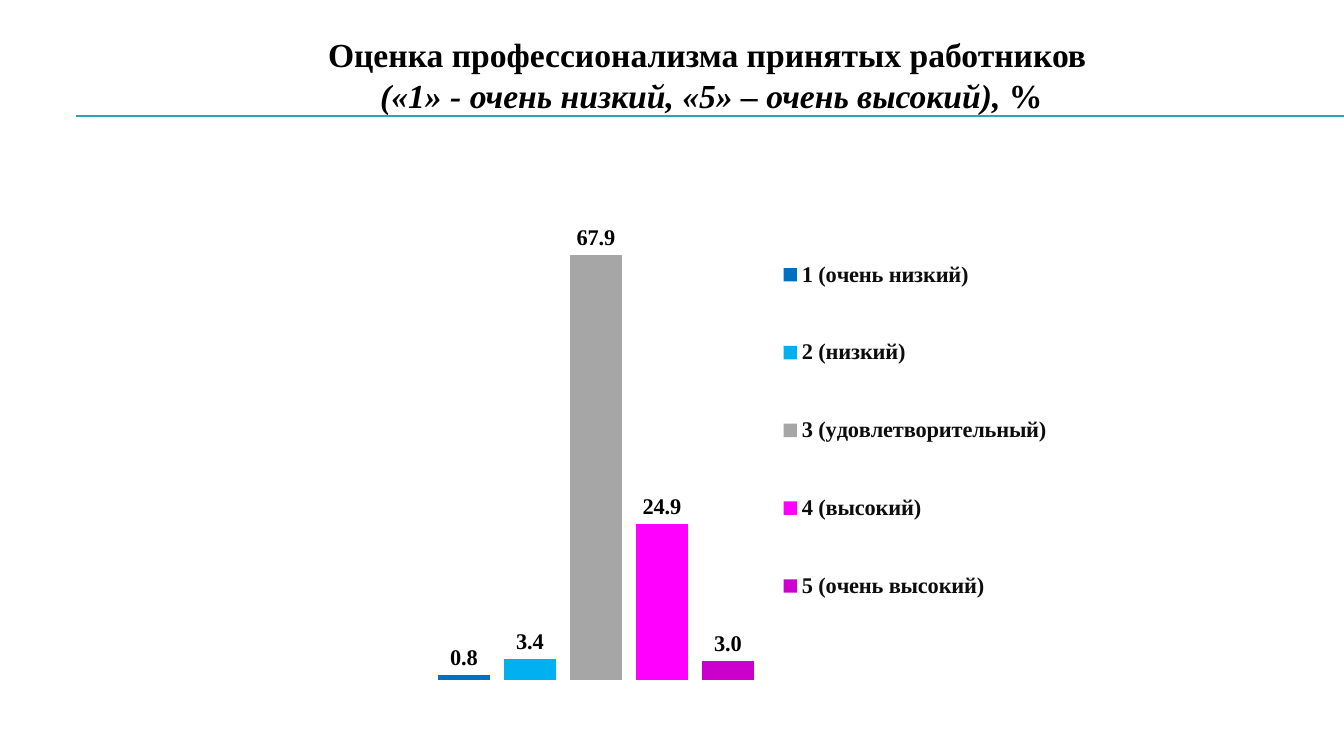
from typing import NamedTuple

from lxml import etree
from pptx import Presentation
from pptx.chart.data import CategoryChartData
from pptx.dml.color import RGBColor
from pptx.enum.chart import XL_CHART_TYPE, XL_LABEL_POSITION, XL_LEGEND_POSITION
from pptx.enum.shapes import MSO_CONNECTOR
from pptx.enum.text import MSO_ANCHOR, PP_ALIGN
from pptx.oxml.ns import qn
from pptx.util import Inches, Pt

CLUSTERED = XL_CHART_TYPE.COLUMN_CLUSTERED
OUTSIDE_END = XL_LABEL_POSITION.OUTSIDE_END
LEGEND_RIGHT = XL_LEGEND_POSITION.RIGHT
STRAIGHT = MSO_CONNECTOR.STRAIGHT
TOP = MSO_ANCHOR.TOP
CENTER = PP_ALIGN.CENTER

WIDTH, HEIGHT = Inches(13.33), Inches(7.5)
TITLE_FONT, CHART_FONT = "Times New Roman", "Roboto"
BLACK = RGBColor(0x00, 0x00, 0x00)
NEAR_BLACK = RGBColor(0x0D, 0x0D, 0x0D)
TEAL = RGBColor(0x2D, 0xA2, 0xBF)
BLUE = RGBColor(0x00, 0x70, 0xC0)
SKY = RGBColor(0x00, 0xB0, 0xF0)
GRAY = RGBColor(0xA6, 0xA6, 0xA6)
MAGENTA = RGBColor(0xFF, 0x00, 0xFF)
PURPLE = RGBColor(0xCC, 0x00, 0xCC)


class Area(NamedTuple):
    """A rectangle in shares of its container."""
    left: float
    top: float
    width: float
    height: float

    def on_slide(self) -> tuple[int, int, int, int]:
        return (int(self.left * WIDTH), int(self.top * HEIGHT),
                int(self.width * WIDTH), int(self.height * HEIGHT))


class Rating(NamedTuple):
    name: str
    percent: float
    color: RGBColor


TITLE_AREA = Area(0.0863, 0.0387, 0.886, 0.1213)
CHART_AREA = Area(0.2723, 0.216, 0.5139, 0.704)
PLOT_AREA = Area(0.022, 0.029, 0.622, 0.942)
LEGEND_AREA = Area(0.59, 0.087, 0.41, 0.83)
RULE_LEFT = 0.0563
RULE_TOPS = (0.1533, 0.1547)

RATINGS = [
    Rating("1 (очень низкий)", 0.8, BLUE),
    Rating("2 (низкий)", 3.4, SKY),
    Rating("3 (удовлетворительный)", 67.9, GRAY),
    Rating("4 (высокий)", 24.9, MAGENTA),
    Rating("5 (очень высокий)", 3.0, PURPLE),
]


def set_font(font, name: str, size: int, color: RGBColor, bold: bool) -> None:
    font.name = name
    font.size = Pt(size)
    font.bold = bold
    font.color.rgb = color


def add_rule(page, top: float) -> None:
    y = int(top * HEIGHT)
    rule = page.shapes.add_connector(STRAIGHT, int(RULE_LEFT * WIDTH), y, WIDTH, y)
    rule.line.color.rgb = TEAL
    rule.line.width = Pt(0.75)
    etree.SubElement(rule._element.spPr, qn("a:effectLst"))


def write_title(page) -> None:
    title = page.shapes.title
    title.left, title.top, title.width, title.height = TITLE_AREA.on_slide()
    frame = title.text_frame
    frame.word_wrap = True
    frame.vertical_anchor = TOP
    heading, scale = frame.paragraphs[0], frame.add_paragraph()
    heading.add_run().text = "Оценка профессионализма принятых работников "
    for text, italic in (("(«1» - очень низкий, «5» – очень высокий), ", True),
                         ("%", False)):
        span = scale.add_run()
        span.text = text
        span.font.italic = italic
    for para in (heading, scale):
        para.alignment = CENTER
        set_font(para.font, TITLE_FONT, 24, BLACK, True)


def make_layout(area: Area, inner: bool):
    layout = etree.Element(qn("c:layout"))
    manual = etree.SubElement(layout, qn("c:manualLayout"))
    settings = [("layoutTarget", "inner")] if inner else []
    settings += [("xMode", "edge"), ("yMode", "edge")]
    settings += zip("xywh", map(str, area))
    for tag, value in settings:
        etree.SubElement(manual, qn(f"c:{tag}")).set("val", value)
    return layout


def add_rating_chart(page) -> None:
    data = CategoryChartData(number_format="0.0")
    data.categories = ["1"]
    for rating in RATINGS:
        data.add_series(rating.name, [rating.percent])
    chart = page.shapes.add_chart(CLUSTERED, *CHART_AREA.on_slide(), data).chart
    chart.has_title = False
    set_font(chart.font, CHART_FONT, 10, BLACK, False)

    # Axes stay hidden; the value scale is fixed
    chart.category_axis.visible = False
    values = chart.value_axis
    values.visible = False
    values.has_major_gridlines = False
    values.minimum_scale, values.maximum_scale = 0, 80

    # Columns and their labels
    plot = chart.plots[0]
    plot.vary_by_categories = False
    plot.gap_width, plot.overlap = 219, -27
    for series, rating in zip(plot.series, RATINGS):
        series.format.fill.solid()
        series.format.fill.fore_color.rgb = rating.color
        labels = series.data_labels
        labels.show_value = True
        labels.position = OUTSIDE_END
        labels.number_format = "0.0"
        labels.number_format_is_linked = False
        set_font(labels.font, TITLE_FONT, 16, BLACK, True)

    # Legend
    chart.has_legend = True
    legend = chart.legend
    legend.position = LEGEND_RIGHT
    legend.include_in_layout = False
    set_font(legend.font, TITLE_FONT, 16, NEAR_BLACK, True)

    # Fixed places of the plot and the legend
    plot_area = chart._chartSpace.find(".//" + qn("c:plotArea"))
    for parent in (plot_area, legend._element):
        for old in parent.findall(qn("c:layout")):
            parent.remove(old)
    plot_area.insert(0, make_layout(PLOT_AREA, True))
    legend._element.find(qn("c:legendPos")).addnext(make_layout(LEGEND_AREA, False))


def main() -> None:
    deck = Presentation()
    deck.slide_width, deck.slide_height = WIDTH, HEIGHT
    page = deck.slides.add_slide(deck.slide_layouts[5])
    for top in RULE_TOPS:
        add_rule(page, top)
    write_title(page)
    add_rating_chart(page)
    deck.save("out.pptx")


if __name__ == "__main__":
    main()
